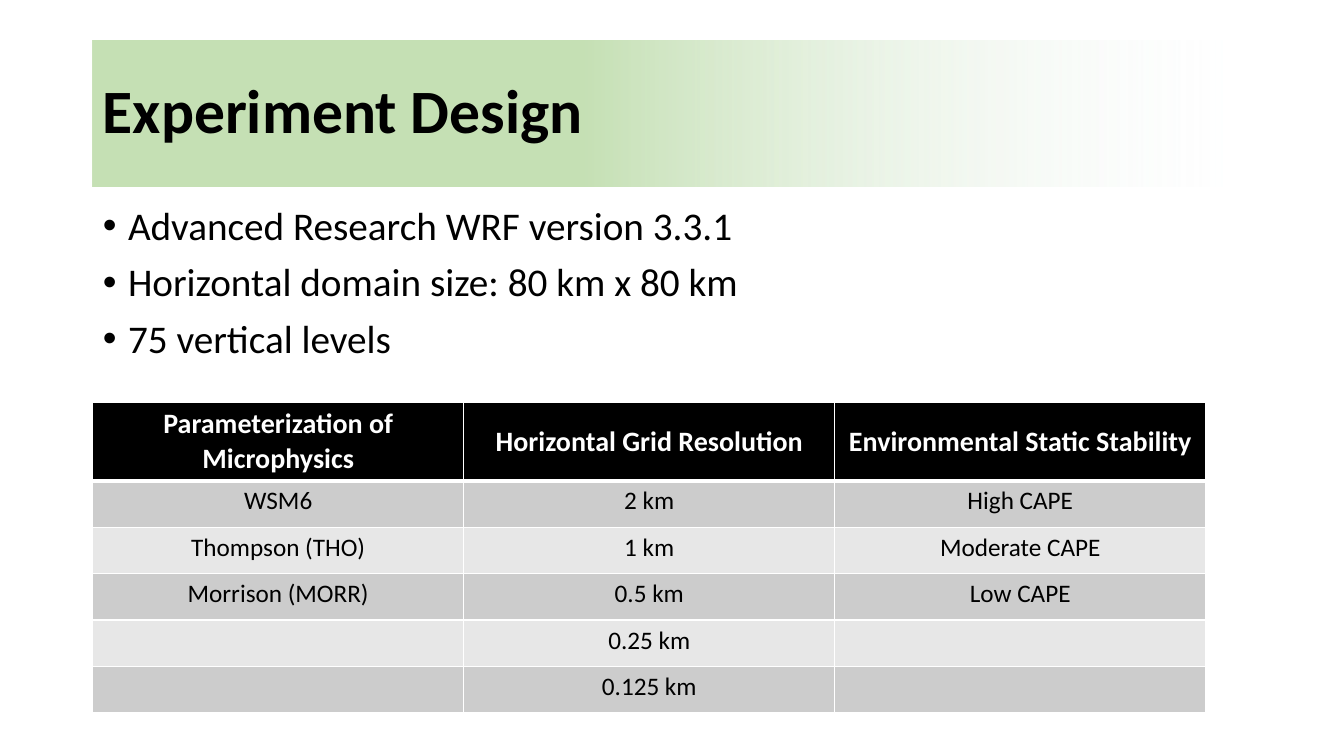
from lxml.etree import SubElement
from pptx import Presentation
from pptx.dml.color import RGBColor
from pptx.enum.text import MSO_ANCHOR, MSO_AUTO_SIZE, PP_ALIGN
from pptx.oxml.ns import qn
from pptx.util import Inches, Pt

WIDTH, HEIGHT = 13.33, 7.5
LEFT = 0.069 * WIDTH
BANNER_BOX = (LEFT, 0.4, 11.5, 1.45)
SETUP_BOX = (LEFT, 2, 11.5, 5.25)
FACTORS_BOX = (LEFT, 3.99, 11.04, 3.07)
BLACK, WHITE = "000000", "FFFFFF"
BANDS = ("CCCCCC", "E7E7E7")
SETUP = (
    "Advanced Research WRF version 3.3.1",
    "Horizontal domain size: 80 km x 80 km",
    "75 vertical levels",
)
FACTORS = (
    ("Parameterization of Microphysics", "Horizontal Grid Resolution",
     "Environmental Static Stability"),
    ("WSM6", "2 km", "High CAPE"),
    ("Thompson (THO)", "1 km", "Moderate CAPE"),
    ("Morrison (MORR)", "0.5 km", "Low CAPE"),
    ("", "0.25 km", ""),
    ("", "0.125 km", ""),
)


def color(code):
    """Turn a hex string into a colour."""
    return RGBColor.from_string(code)


def apply(target, values):
    """Set every attribute named in values on target."""
    for name, value in values.items():
        setattr(target, name, value)


def style_font(font, size, code=BLACK, bold=False):
    """Format a font."""
    apply(font, {"name": "Calibri", "size": Pt(size), "bold": bold})
    font.color.rgb = color(code)


def place(holder, box):
    """Move a placeholder to a box given in inches."""
    apply(holder, dict(zip(("left", "top", "width", "height"), map(Inches, box))))


def build_banner(title, box):
    """Place the title over a green band fading out to the right."""
    place(title, box)
    title.fill.gradient()
    title.fill.gradient_angle = 180
    stops = title.fill.gradient_stops
    for stop, position, code in zip(stops, (0, 0.58), ("F7FAFD", "C5E0B4")):
        stop.position = position
        stop.color.rgb = color(code)
    clear = title.fill._xPr.find(".//" + qn("a:srgbClr"))
    SubElement(clear, qn("a:alpha"), val="0")
    title.text = "Experiment Design"
    apply(title.text_frame, {"vertical_anchor": MSO_ANCHOR.MIDDLE,
                             "auto_size": MSO_AUTO_SIZE.NONE, "word_wrap": True})
    heading = title.text_frame.paragraphs[0]
    apply(heading, {"alignment": PP_ALIGN.LEFT, "line_spacing": 0.9})
    style_font(heading.font, 44, bold=True)


def build_setup(body, box):
    """Place the bulleted model setup."""
    place(body, box)
    frame = body.text_frame
    frame.text = "\n".join(SETUP)
    apply(frame, {"auto_size": MSO_AUTO_SIZE.NONE, "word_wrap": True})
    for index, item in enumerate(frame.paragraphs):
        apply(item, {"line_spacing": 0.9, "space_before": Pt(10 if index else 0)})
        properties = item._p.get_or_add_pPr()
        properties.set("marL", str(Inches(0.25)))
        properties.set("indent", str(-Inches(0.25)))
        SubElement(properties, qn("a:buChar"), char="•")
        style_font(item.font, 28)


def add_borders(cell, bottom):
    """Draw white cell borders, with the bottom width in points."""
    properties = cell._tc.get_or_add_tcPr()
    for side, width in (("L", 1), ("R", 1), ("T", 1), ("B", bottom)):
        border = SubElement(properties, qn("a:ln" + side), w=str(Pt(width)))
        fill = SubElement(border, qn("a:solidFill"))
        SubElement(fill, qn("a:srgbClr"), val=WHITE)


def build_factors(slide, box):
    """Place the table of experiment factors."""
    table = slide.shapes.add_table(
        len(FACTORS), len(FACTORS[0]), *map(Inches, box)).table
    header_height = box[3] / 4
    row_height = (box[3] - header_height) / (len(FACTORS) - 1)
    for row, labels in enumerate(FACTORS):
        header = row == 0
        table.rows[row].height = Inches(header_height if header else row_height)
        for column, label in enumerate(labels):
            cell = table.cell(row, column)
            add_borders(cell, 3 if header else 1)
            if row == 1:
                cell._tc.tcPr.find(qn("a:lnT")).set("w", str(Pt(3)))
            cell.fill.solid()
            cell.fill.fore_color.rgb = color(BLACK if header else BANDS[(row - 1) % 2])
            cell.vertical_anchor = MSO_ANCHOR.MIDDLE if header else MSO_ANCHOR.TOP
            cell.text = label
            entry = cell.text_frame.paragraphs[0]
            entry.alignment = PP_ALIGN.CENTER
            style_font(entry.font, 20 if header else 18,
                       WHITE if header else BLACK, header)


def main():
    """Build and save the slide."""
    deck = Presentation()
    apply(deck, {"slide_width": Inches(WIDTH), "slide_height": Inches(HEIGHT)})
    slide = deck.slides.add_slide(deck.slide_layouts[1])
    build_banner(slide.shapes.title, BANNER_BOX)
    build_setup(slide.placeholders[1], SETUP_BOX)
    build_factors(slide, FACTORS_BOX)
    deck.save("out.pptx")


if __name__ == "__main__":
    main()
